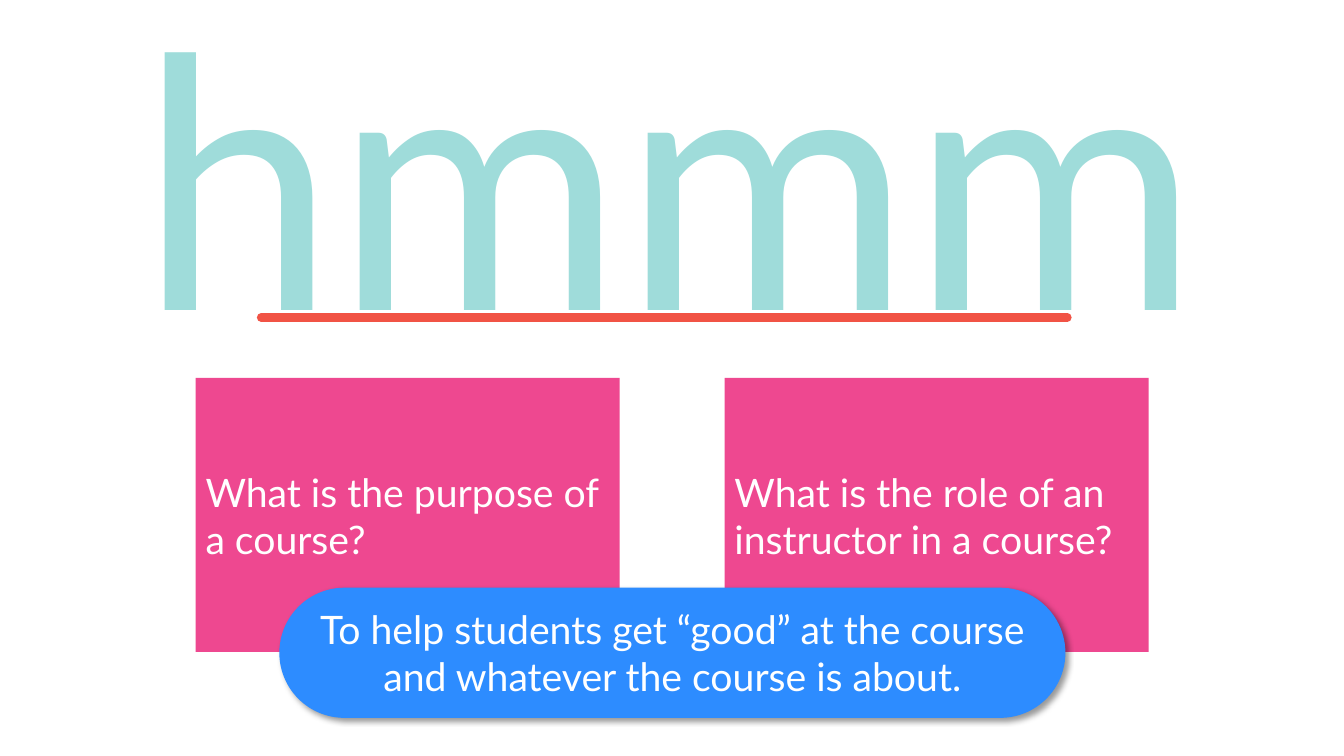
"""Build a slide that asks about the purpose of a course."""
from lxml import etree
from pptx import Presentation
from pptx import util as u
from pptx.dml.color import RGBColor
from pptx.enum import shapes, text
from pptx.oxml.ns import qn

TEAL = RGBColor(0x9F, 0xDC, 0xDA)
RED = RGBColor(0xF1, 0x53, 0x45)
PINK = RGBColor(0xEE, 0x48, 0x90)
BLUE = RGBColor(0x2D, 0x8C, 0xFF)
WHITE = RGBColor(0xFF, 0xFF, 0xFF)

QUESTIONS = (
    "What is the purpose of a course?",
    "What is the role of an instructor in a course?",
)
ANSWER = "To help students get “good” at the course and whatever the course is about."


def write(box, words, size, color, align):
    """Fill a shape with one vertically centred paragraph."""
    frame = box.text_frame
    frame.word_wrap = True
    frame.auto_size = text.MSO_AUTO_SIZE.NONE
    frame.vertical_anchor = text.MSO_ANCHOR.MIDDLE
    para = frame.paragraphs[0]
    para.alignment = align
    span = para.add_run()
    span.text = words
    span.font.name = "Lato"
    span.font.size = u.Pt(size)
    span.font.color.rgb = color


def add_title(page, words):
    """Place the huge title."""
    title = page.shapes.title
    title.left, title.top = u.Cm(-0.1), u.Cm(2.67)
    title.width, title.height = u.Cm(33.96), u.Cm(3.25)
    write(title, words, 250, TEAL, text.PP_ALIGN.CENTER)


def add_underline(page, left, right, top):
    """Draw a thick round-ended line without a shadow."""
    line = page.shapes.add_connector(
        shapes.MSO_CONNECTOR.STRAIGHT, u.Cm(left), u.Cm(top), u.Cm(right), u.Cm(top))
    line.line.color.rgb = RED
    line.line.width = u.Pt(6)
    properties = line._element.spPr
    properties.find(qn("a:ln")).set("cap", "rnd")
    etree.SubElement(properties, qn("a:effectLst"))


def add_panel(page, kind, left, top, width, height, fill, words, align):
    """Add a flat filled shape with white text."""
    panel = page.shapes.add_shape(kind, u.Cm(left), u.Cm(top), u.Cm(width), u.Cm(height))
    panel.shadow.inherit = False
    panel.fill.solid()
    panel.fill.fore_color.rgb = fill
    panel.line.fill.background()
    write(panel, words, 28, WHITE, align)
    return panel


def add_drop_shadow(panel):
    """Give a shape a soft shadow to the lower right."""
    effects = panel._element.spPr.find(qn("a:effectLst"))
    shadow = etree.SubElement(
        effects, qn("a:outerShdw"), blurRad=str(u.Pt(4)), dist=str(u.Pt(3)),
        dir=str(45 * 60000), algn="tl", rotWithShape="0")
    black = etree.SubElement(shadow, qn("a:srgbClr"), val="000000")
    etree.SubElement(black, qn("a:alpha"), val="40000")


def main():
    """Build and save the deck."""
    deck = Presentation()
    deck.slide_width, deck.slide_height = u.Cm(33.87), u.Cm(19.05)
    page = deck.slides.add_slide(deck.slide_layouts[5])

    add_underline(page, 6.58, 26.9, 8)
    add_title(page, "hmmm")
    for column, question in enumerate(QUESTIONS):
        add_panel(page, shapes.MSO_SHAPE.RECTANGLE, 4.93 + 13.33 * column, 9.52,
                  10.69, 6.91, PINK, question, text.PP_ALIGN.LEFT)
    answer = add_panel(page, shapes.MSO_SHAPE.ROUNDED_RECTANGLE, 7.04, 14.81,
                       19.81, 3.28, BLUE, ANSWER, text.PP_ALIGN.CENTER)
    answer.adjustments[0] = 0.5
    add_drop_shadow(answer)

    deck.save("out.pptx")


if __name__ == "__main__":
    main()
